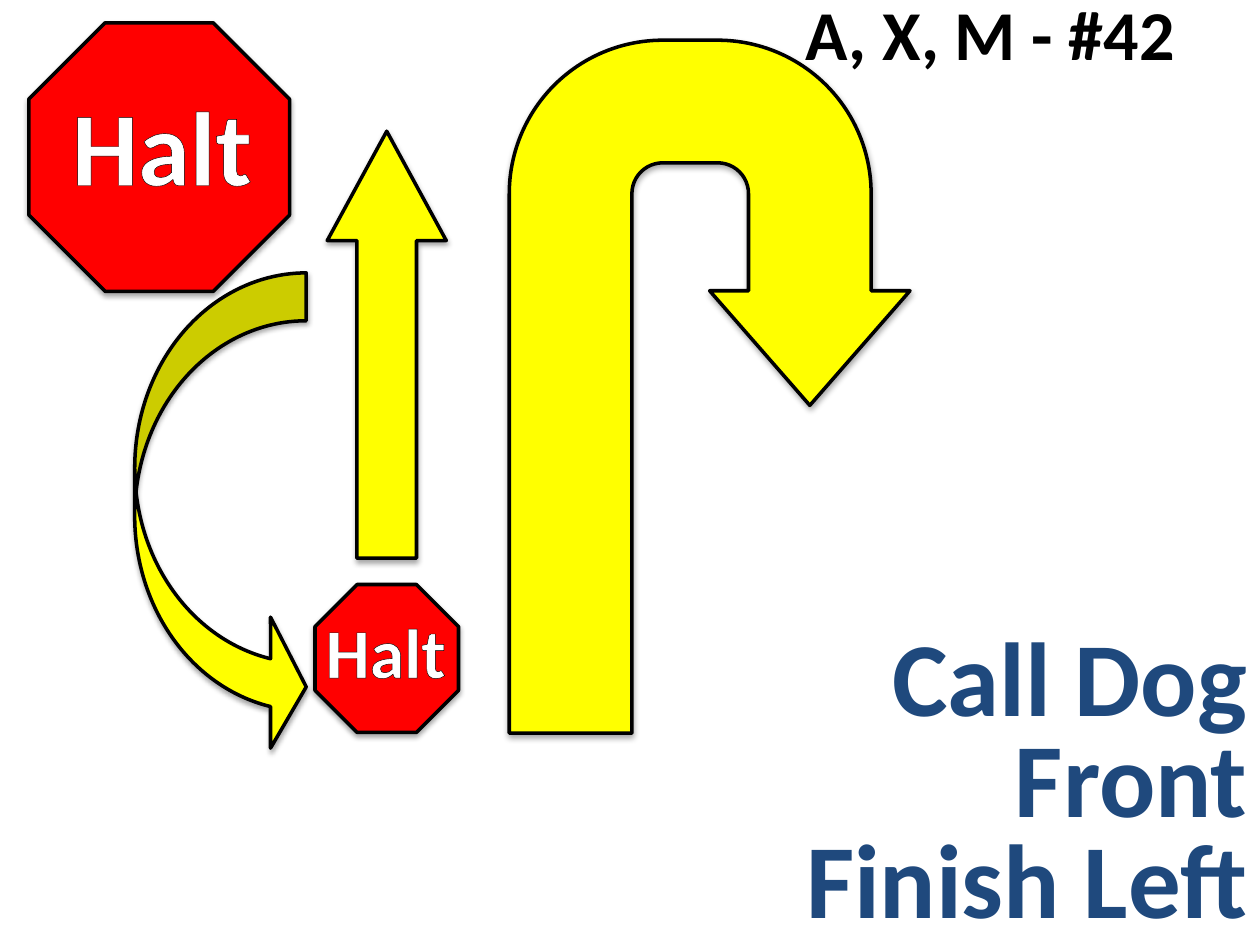
import pptx
import pptx.util
import pptx.dml.color
import pptx.enum.shapes
import pptx.enum.text
import pptx.oxml
import pptx.oxml.ns

Pt = pptx.util.Pt
Kind = pptx.enum.shapes.MSO_SHAPE
Align = pptx.enum.text.PP_ALIGN
Fit = pptx.enum.text.MSO_AUTO_SIZE
Anchor = pptx.enum.text.MSO_ANCHOR

COLORS = {"yellow": "FFFF00", "red": "FF0000", "black": "000000",
          "white": "FFFFFF", "blue": "1F497D"}


def color(name):
    return pptx.dml.color.RGBColor.from_string(COLORS[name])


def parse_xml(body):
    return pptx.oxml.parse_xml(body.replace(" ", f" {pptx.oxml.ns.nsdecls('a')} ", 1))


def place(shape, box):
    shape.left, shape.top, shape.width, shape.height = map(Pt, box)


def add_shadow(shape):
    shape.shadow.inherit = False
    effects = shape._element.spPr.find(pptx.oxml.ns.qn("a:effectLst"))
    effects.append(parse_xml(
        f'<a:outerShdw blurRad="{Pt(3.1)}" dist="{Pt(1.8)}" dir="5400000" rotWithShape="0">'
        f'<a:srgbClr val="{COLORS["black"]}"><a:alpha val="35000"/></a:srgbClr></a:outerShdw>'))


def outline(run):
    run._r.get_or_add_rPr().insert(0, parse_xml(
        f'<a:ln w="{Pt(0.83)}"><a:solidFill><a:srgbClr val="{COLORS["black"]}"/>'
        '</a:solidFill></a:ln>'))


def add_shape(shapes, kind, box, fill, adjust=()):
    shape = shapes.add_shape(kind, *map(Pt, box))
    for index, value in enumerate(adjust):
        shape.adjustments[index] = value
    shape.fill.solid()
    shape.fill.fore_color.rgb = color(fill)
    shape.line.color.rgb = color("black")
    shape.line.width = Pt(2)
    add_shadow(shape)


def write(shape, lines, size, ink, align, wrap=True, edge=True, space=None):
    frame = shape.text_frame
    frame.text = "\n".join(lines)
    frame.word_wrap = wrap
    frame.auto_size = Fit.SHAPE_TO_FIT_TEXT
    frame.vertical_anchor = Anchor.TOP
    for para in frame.paragraphs:
        para.alignment = align
        para.line_spacing = space
        para.font.name = "Calibri"
        para.font.size = Pt(size)
        para.font.bold = True
        para.font.color.rgb = color(ink)
        if edge:
            for run in para.runs:
                outline(run)


def add_sign(slide, box, label, size):
    group = slide.shapes.add_group_shape()
    add_shape(group.shapes, Kind.OCTAGON, box, "red")
    text = group.shapes.add_textbox(*map(Pt, label))
    write(text, ["Halt"], size, "white", Align.LEFT)


def main():
    deck = pptx.Presentation()
    deck.slide_width, deck.slide_height = Pt(720), Pt(540)
    slide = deck.slides.add_slide(deck.slide_layouts[5])
    shapes = slide.shapes

    title = shapes.title
    place(title, (411, 360, 309, 184))
    write(title, ["Call Dog", "Front", "Finish Left"], 60, "blue", Align.RIGHT, space=0.8)

    add_shape(shapes, Kind.U_TURN_ARROW, (291, 23, 229, 396), "yellow",
              (0.306, 0.25, 0.286, 0.383, 0.527))
    number = shapes.add_textbox(*map(Pt, (451, -9, 227.5, 55.5)))
    write(number, ["A, X, M - #42"], 40, "black", Align.RIGHT, wrap=False, edge=False)
    add_shape(shapes, Kind.UP_ARROW, (187, 75, 68, 244), "yellow", (0.5, 0.919))
    add_sign(slide, (16.5, 13, 149, 153.5), (34, 42.5, 122, 80), 60)
    add_sign(slide, (180, 334, 82, 84.5), (179, 344, 96.5, 55.5), 40)
    add_shape(shapes, Kind.CURVED_RIGHT_ARROW, (77, 156, 98, 274), "yellow",
              (0.279, 0.764, 0.208))

    deck.save("out.pptx")


if __name__ == "__main__":
    main()
